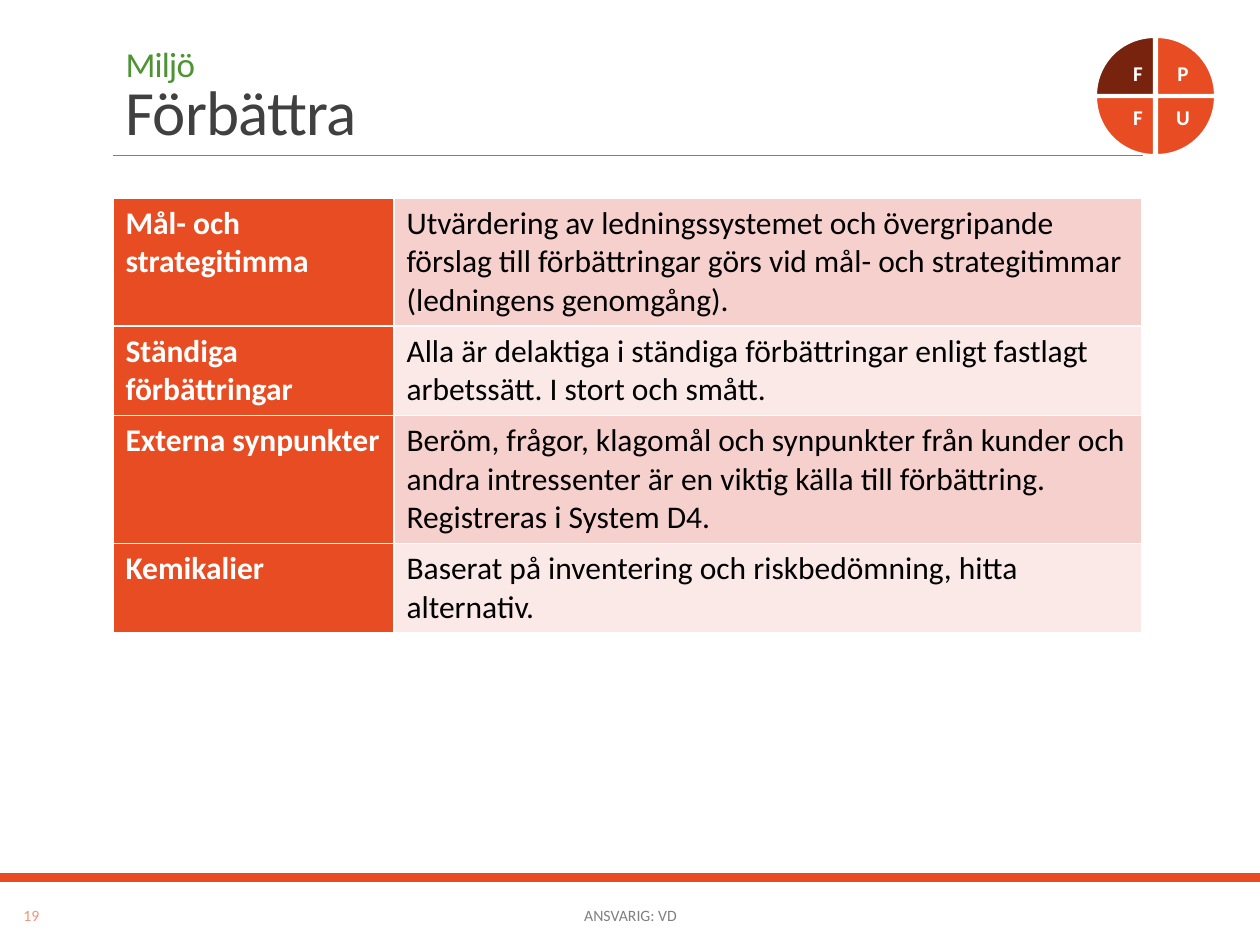
from copy import deepcopy
from dataclasses import dataclass

from lxml.etree import SubElement
from pptx import Presentation
from pptx.dml.color import RGBColor
from pptx.enum.shapes import MSO_CONNECTOR, MSO_SHAPE
from pptx.enum.text import MSO_ANCHOR, MSO_AUTO_SIZE, PP_ALIGN
from pptx.oxml.ns import qn
from pptx.util import Pt

SCALE = 914400 / 126
FACE = "Calibri"
ORANGE = RGBColor(0xE8, 0x4C, 0x22)
BROWN = RGBColor(0x78, 0x23, 0x0D)
GREEN = RGBColor(0x4F, 0x94, 0x34)
DARK = RGBColor(0x40, 0x40, 0x40)
GRAY = RGBColor(0x80, 0x80, 0x80)
SALMON = RGBColor(0xF1, 0x94, 0x7A)
PINK = RGBColor(0xF6, 0xD0, 0xCD)
PALE = RGBColor(0xFB, 0xE9, 0xE8)
WHITE = RGBColor(0xFF, 0xFF, 0xFF)
BLACK = RGBColor(0, 0, 0)


@dataclass(frozen=True)
class Box:
    """A frame in px."""
    left: int
    top: int
    width: int
    height: int

    def emu(self) -> tuple:
        """Give the frame in EMU."""
        return tuple(map(px, (self.left, self.top, self.width, self.height)))


@dataclass(frozen=True)
class Wedge:
    """A quarter of the wheel."""
    mark: str
    col: int
    row: int
    turn: int
    fill: RGBColor = ORANGE


@dataclass(frozen=True)
class Row:
    """A table row with its height in px."""
    head: str
    body: str
    height: int


WEDGES = (
    Wedge("F", 0, 0, 0, BROWN),
    Wedge("P", 1, 0, 90),
    Wedge("U", 1, 1, 180),
    Wedge("F", 0, 1, 270),
)
ROWS = (
    Row("Mål- och strategitimma",
        "Utvärdering av ledningssystemet och övergripande förslag till förbättringar "
        "görs vid mål- och strategitimmar (ledningens genomgång).", 128),
    Row("Ständiga förbättringar",
        "Alla är delaktiga i ständiga förbättringar enligt fastlagt arbetssätt. "
        "I stort och smått.", 89),
    Row("Externa synpunkter",
        "Beröm, frågor, klagomål och synpunkter från kunder och andra intressenter "
        "är en viktig källa till förbättring. Registreras i System D4.", 128),
    Row("Kemikalier", "Baserat på inventering och riskbedömning, hitta alternativ.", 89),
)


def px(count: int) -> int:
    """Turn px into EMU."""
    return round(count * SCALE)


def apply(item, form: dict) -> None:
    """Set attributes from a dict."""
    for name, value in form.items():
        setattr(item, name, value)


def write(para, text: str, size: int, color: RGBColor, bold: bool = False):
    """Add a styled run."""
    run = para.add_run()
    run.text = text
    apply(run.font, {"name": FACE, "size": Pt(size), "bold": bold})
    run.font.color.rgb = color
    return run


def paint(shape, color: RGBColor) -> None:
    """Fill a shape and drop its shadow."""
    shape.shadow.inherit = False
    shape.fill.solid()
    shape.fill.fore_color.rgb = color


def label(shapes, box: Box, text: str, size: int, color: RGBColor,
          bold: bool = False, wrap: bool = True) -> None:
    """Add centred text."""
    frame = shapes.add_textbox(*box.emu()).text_frame
    apply(frame, {"word_wrap": wrap, "vertical_anchor": MSO_ANCHOR.MIDDLE})
    para = frame.paragraphs[0]
    para.alignment = PP_ALIGN.CENTER
    write(para, text, size, color, bold)


def draw_title(title) -> None:
    """Place and write the title."""
    box = Box(113, 39, 1040, 116).emu()
    apply(title, dict(zip(("left", "top", "width", "height"), box)))
    frame = title.text_frame
    apply(frame, {"word_wrap": True, "auto_size": MSO_AUTO_SIZE.NONE,
                  "vertical_anchor": MSO_ANCHOR.BOTTOM})
    para = frame.paragraphs[0]
    apply(para, {"alignment": PP_ALIGN.LEFT, "line_spacing": 0.85})
    first = write(para, "Miljö", 20, GREEN)
    para.add_line_break()
    last = write(para, "Förbättra", 36, DARK)
    for run in (first, last):
        run.font._element.set("spc", "-50")
    para._p.find(qn("a:br")).append(deepcopy(first.font._element))


def draw_rules(shapes) -> None:
    """Draw the footer bar and title line."""
    bar = shapes.add_shape(MSO_SHAPE.RECTANGLE, *Box(0, 873, 1260, 9).emu())
    paint(bar, ORANGE)
    bar.line.fill.background()
    rule = shapes.add_connector(MSO_CONNECTOR.STRAIGHT, *map(px, (113, 155, 1143, 155)))
    rule.line.color.rgb = GRAY
    rule.line.width = Pt(0.5)
    SubElement(rule._element.spPr, qn("a:effectLst"))


def edge(cell) -> None:
    """Give a cell white borders."""
    props = cell._tc.get_or_add_tcPr()
    for spot, side in enumerate(("lnL", "lnR", "lnT", "lnB")):
        line = SubElement(props, qn(f"a:{side}"), w=str(Pt(1)))
        fill = SubElement(line, qn("a:solidFill"))
        SubElement(fill, qn("a:srgbClr"), val=str(WHITE))
        props.insert(spot, line)


def draw_table(shapes) -> None:
    """Draw the table."""
    high = sum(row.height for row in ROWS)
    table = shapes.add_table(len(ROWS), 2, *Box(113, 198, 1029, high).emu()).table
    for col, width in zip(table.columns, (281, 748)):
        col.width = px(width)
    for num, row in enumerate(ROWS):
        table.rows[num].height = px(row.height)
        looks = ((row.head, WHITE, True, ORANGE),
                 (row.body, BLACK, False, PALE if num % 2 else PINK))
        for cell, (text, color, bold, fill) in zip(table.rows[num].cells, looks):
            cell.fill.solid()
            cell.fill.fore_color.rgb = fill
            edge(cell)
            write(cell.text_frame.paragraphs[0], text, 18, color, bold)


def draw_wheel(shapes) -> None:
    """Draw the wheel of four wedges."""
    group = shapes.add_group_shape().shapes
    for part in WEDGES:
        box = Box(1096 + 61 * part.col, 37 + 60 * part.row, 58, 58)
        wedge = group.add_shape(MSO_SHAPE.PIE_WEDGE, *box.emu())
        paint(wedge, part.fill)
        wedge.rotation = part.turn
        wedge.line.color.rgb = WHITE
        wedge.line.width = Pt(1.25)
        spot = Box(1117 + 45 * part.col, 52 + 44 * part.row, 42, 42)
        label(group, spot, part.mark, 12, WHITE, True, False)


def main() -> None:
    """Build the slide."""
    deck = Presentation()
    apply(deck, {"slide_width": px(1260), "slide_height": px(945)})
    shapes = deck.slides.add_slide(deck.slide_layouts[5]).shapes
    draw_rules(shapes)
    draw_title(shapes.title)
    draw_table(shapes)
    label(shapes, Box(5, 890, 53, 50), "19", 9, SALMON)
    draw_wheel(shapes)
    label(shapes, Box(381, 890, 499, 50), "ANSVARIG: VD", 9, GRAY)
    deck.save("out.pptx")


if __name__ == "__main__":
    main()
